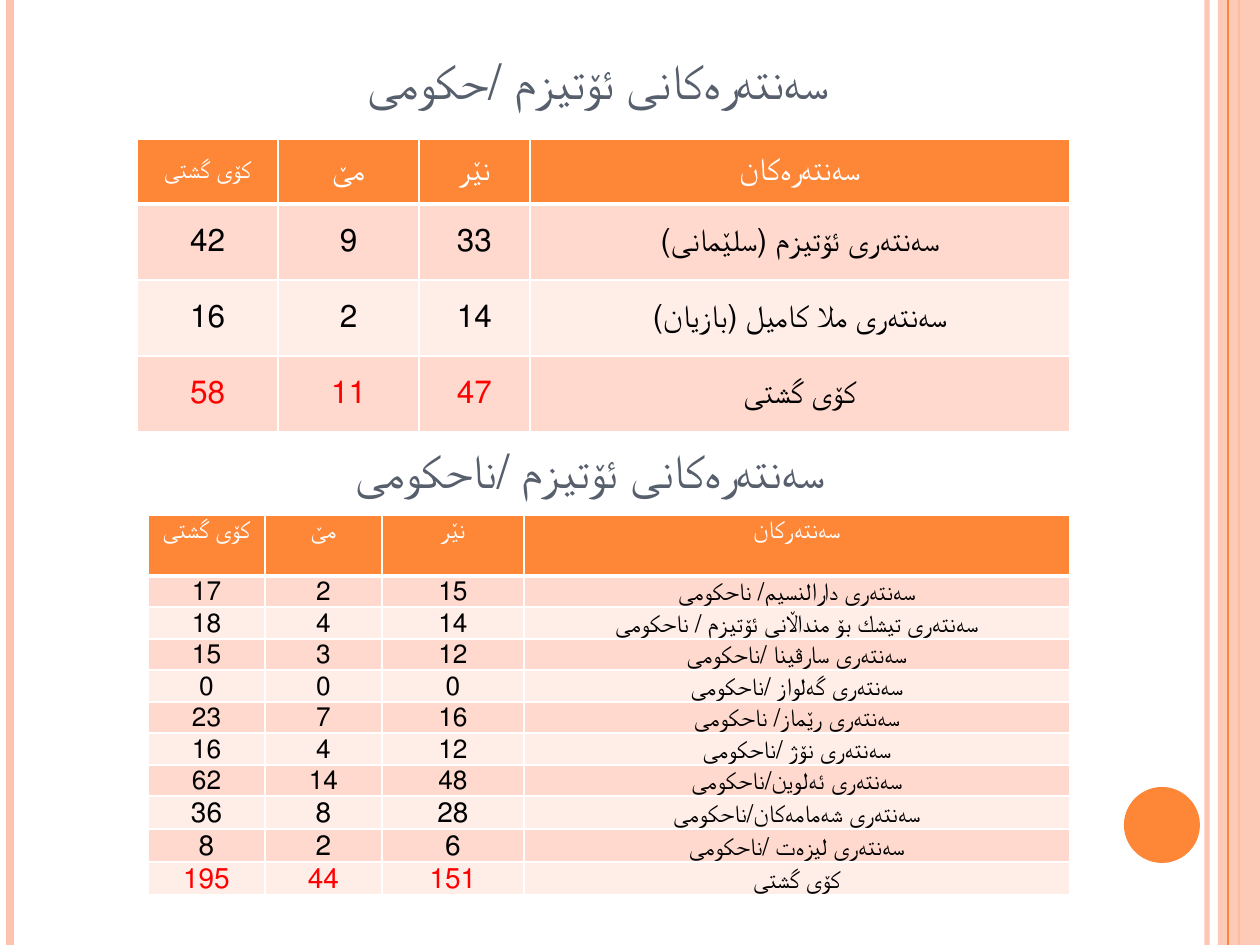
import lxml.etree
import pptx
import pptx.dml.color
import pptx.enum.shapes
import pptx.enum.text
import pptx.oxml.ns
import pptx.util

RGBColor = pptx.dml.color.RGBColor
ANCHOR = pptx.enum.text.MSO_ANCHOR
SHAPE = pptx.enum.shapes.MSO_SHAPE
qn = pptx.oxml.ns.qn

ORANGE = RGBColor(0xFE, 0x86, 0x37)
PEACH = RGBColor(0xFE, 0xC3, 0xAE)
BAND_DARK = RGBColor(0xFF, 0xD9, 0xCE)
BAND_LIGHT = RGBColor(0xFF, 0xED, 0xE8)
SLATE = RGBColor(0x57, 0x5F, 0x6D)
WHITE = RGBColor(0xFF, 0xFF, 0xFF)
BLACK = RGBColor(0, 0, 0)
RED = RGBColor(0xFF, 0, 0)

FONT = "Lato"
PX_PER_INCH = 126
HEIGHT = 945

STRIPES = [(1207, PEACH, 3, 93), (10, PEACH, 4.5, 100), (1239, ORANGE, 1.5, 100)]
EDGE_STRIPE = (1228, ORANGE, 0.75, 100)

PUBLIC_CENTRES = [
    ("كۆی گشتی", "مێ", "نێر", "سەنتەرەكان"),
    ("42", "9", "33", "سەنتەری ئۆتیزم (سلێمانی)"),
    ("16", "2", "14", "سەنتەری ملا كامیل (بازیان)"),
    ("58", "11", "47", "كۆی گشتی"),
]
PRIVATE_CENTRES = [
    ("كۆی گشتی", "مێ", "نێر", "سەنتەركان"),
    ("17", "2", "15", "سەنتەری دارالنسیم/ ناحكومی"),
    ("18", "4", "14", "سەنتەری تیشك بۆ منداڵانی ئۆتیزم / ناحكومی"),
    ("15", "3", "12", "سەنتەری سارڤینا /ناحكومی"),
    ("0", "0", "0", "سەنتەری گەلواز /ناحكومی"),
    ("23", "7", "16", "سەنتەری رێماز/ ناحكومی"),
    ("16", "4", "12", "سەنتەری نۆژ /ناحكومی"),
    ("62", "14", "48", "سەنتەری ئەلوین/ناحكومی"),
    ("36", "8", "28", "سەنتەری شەمامەكان/ناحكومی"),
    ("8", "2", "6", "سەنتەری لیزەت /ناحكومی"),
    ("195", "44", "151", "كۆی گشتی"),
]


def px(length):
    """Turn pixels into EMU."""
    return pptx.util.Emu(round(length * 914400 / PX_PER_INCH))


def apply_format(target, values):
    """Set each attribute named in a dict of format values."""
    for name, value in values.items():
        setattr(target, name, value)


def set_opacity(element, percent):
    """Give the first colour inside an element its opacity."""
    colour = next(element.iter(qn("a:srgbClr")))
    lxml.etree.SubElement(colour, qn("a:alpha"), val=str(percent * 1000))


def add_stripe(slide, x, colour, weight, opacity):
    """Draw a vertical line over the full slide height."""
    stripe = slide.shapes.add_connector(
        pptx.enum.shapes.MSO_CONNECTOR.STRAIGHT, px(x), 0, px(x), px(HEIGHT))
    stripe.line.color.rgb = colour
    stripe.line.width = pptx.util.Pt(weight)
    properties = stripe._element.spPr
    lxml.etree.SubElement(properties, qn("a:effectLst"))
    if opacity < 100:
        set_opacity(properties, opacity)


def add_decoration(slide, kind, box, colour, opacity=100):
    """Draw a plain filled shape without outline."""
    decoration = slide.shapes.add_shape(kind, *map(px, box))
    decoration.shadow.inherit = False
    decoration.fill.solid()
    decoration.fill.fore_color.rgb = colour
    decoration.line.fill.background()
    if opacity < 100:
        set_opacity(decoration._element.spPr, opacity)


def write_text(frame, text, size, colour, rtl=False, spacing=None):
    """Write one centred paragraph and return its run."""
    paragraph = frame.paragraphs[0]
    apply_format(paragraph, {
        "alignment": pptx.enum.text.PP_ALIGN.CENTER, "line_spacing": spacing})
    if rtl:
        paragraph._p.get_or_add_pPr().set("rtl", "1")
    run = paragraph.add_run()
    run.text = text
    apply_format(run.font, {"size": pptx.util.Pt(size), "name": FONT, "bold": False})
    run.font.color.rgb = colour
    return run


def add_heading(slide, box, text, size, anchor):
    """Add a small-caps heading."""
    frame = slide.shapes.add_textbox(*map(px, box)).text_frame
    apply_format(frame, {"word_wrap": True, "vertical_anchor": anchor})
    write_text(frame, text, size, SLATE).font._element.set("cap", "small")


def add_borders(cell, above, below):
    """Give a cell white borders, with weights above and below."""
    properties = cell._tc.get_or_add_tcPr()
    for side, weight in (("L", 1), ("R", 1), ("T", above), ("B", below)):
        border = lxml.etree.SubElement(
            properties, qn("a:ln" + side), w=str(pptx.util.Pt(weight)))
        fill = lxml.etree.SubElement(border, qn("a:solidFill"))
        lxml.etree.SubElement(fill, qn("a:srgbClr"), val=str(WHITE))


def add_centre_table(slide, origin, widths, heights, rows, size_of, anchors, spacing=None):
    """Add a banded table whose last row holds red totals."""
    table = slide.shapes.add_table(
        len(rows), len(widths), *map(px, (*origin, sum(widths), sum(heights)))).table
    for column, width in zip(table.columns, widths):
        column.width = px(width)
    for line, height in zip(table.rows, heights):
        line.height = px(height)
    body_margins = {"margin_left": px(4), "margin_right": px(4),
                    "margin_top": px(2), "margin_bottom": px(2)}
    last_row, last_col = len(rows) - 1, len(widths) - 1
    for r, row in enumerate(rows):
        header = r == 0
        band = ORANGE if header else BAND_DARK if r % 2 else BAND_LIGHT
        for c, text in enumerate(row):
            cell = table.cell(r, c)
            add_borders(cell, 3 if r == 1 else 1, 3 if header else 1)
            cell.fill.solid()
            cell.fill.fore_color.rgb = band
            cell.vertical_anchor = anchors[0 if header else 1]
            if not header:
                apply_format(cell, body_margins)
            total = r == last_row and c < last_col
            colour = WHITE if header else RED if total else BLACK
            write_text(cell.text_frame, text, size_of(r, c), colour, not header, spacing)


def public_size(row, column):
    """Return the text size for a cell of the public centres."""
    return 14 if (row, column) == (0, 0) else 18


def private_size(row, column):
    """Return the text size for a cell of the private centres."""
    if row == 0 or column == 3:
        return 14
    return 15 if row < 8 else 16


def main():
    """Build the slide and save it."""
    deck = pptx.Presentation()
    apply_format(deck, {"slide_width": px(1260), "slide_height": px(HEIGHT)})
    slide = deck.slides.add_slide(deck.slide_layouts[6])
    for stripe in STRIPES:
        add_stripe(slide, *stripe)
    add_decoration(slide, SHAPE.RECTANGLE, (1218, 0, 42, HEIGHT), PEACH, 87)
    add_stripe(slide, *EDGE_STRIPE)
    add_decoration(slide, SHAPE.OVAL, (1124, 787, 76, 76), ORANGE)
    add_heading(slide, (122, 441, 949, 57), "سەنتەرەكانی ئۆتیزم /ناحكومی ", 27, ANCHOR.MIDDLE)
    add_centre_table(slide, (137, 139), (141, 141, 111, 540), (65, 76, 76, 76),
                     PUBLIC_CENTRES, public_size, (ANCHOR.MIDDLE, ANCHOR.MIDDLE))
    add_heading(slide, (126, 38, 945, 78), "سەنتەرەكانی ئۆتیزم /حكومی", 28, ANCHOR.BOTTOM)
    add_centre_table(slide, (148, 515), (117, 117, 142, 546),
                     (61, *(31, 32) * 3, 31, 33, 33, 33), PRIVATE_CENTRES,
                     private_size, (ANCHOR.TOP, ANCHOR.BOTTOM), 0.85)
    deck.save("out.pptx")


if __name__ == "__main__":
    main()
